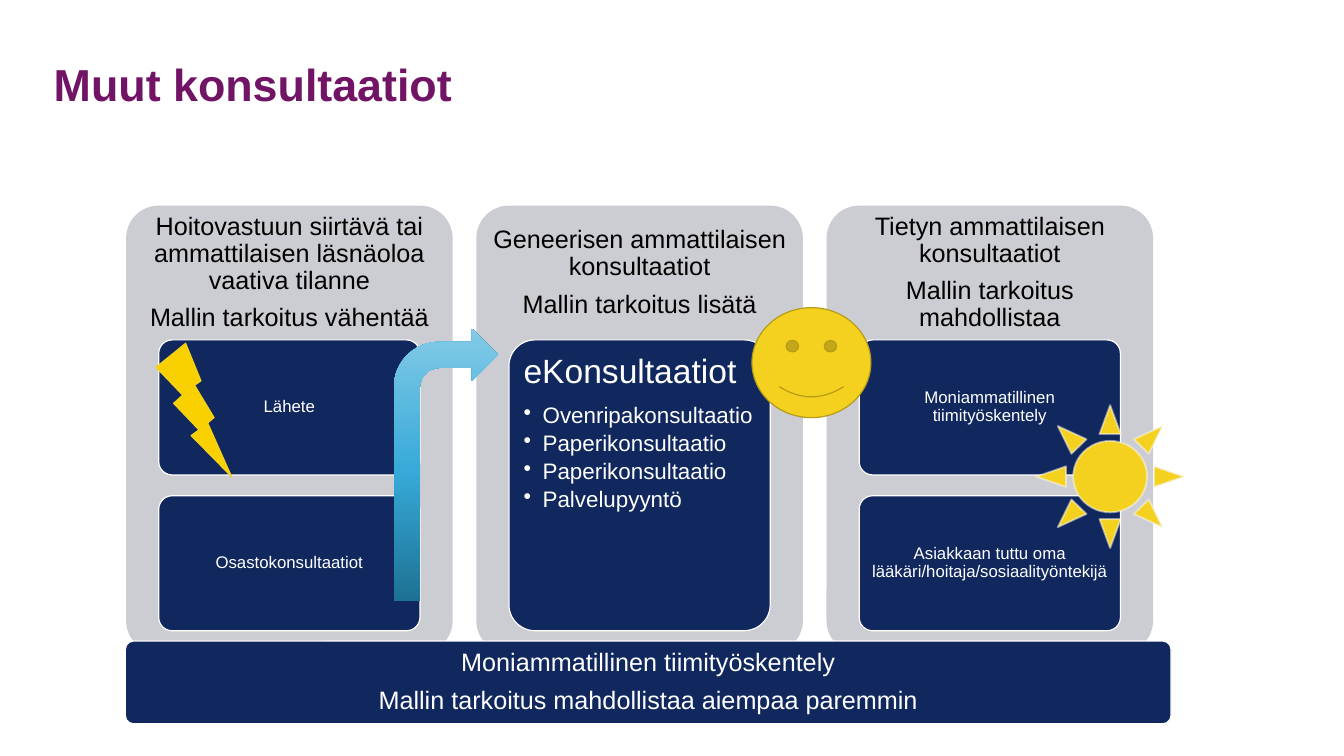
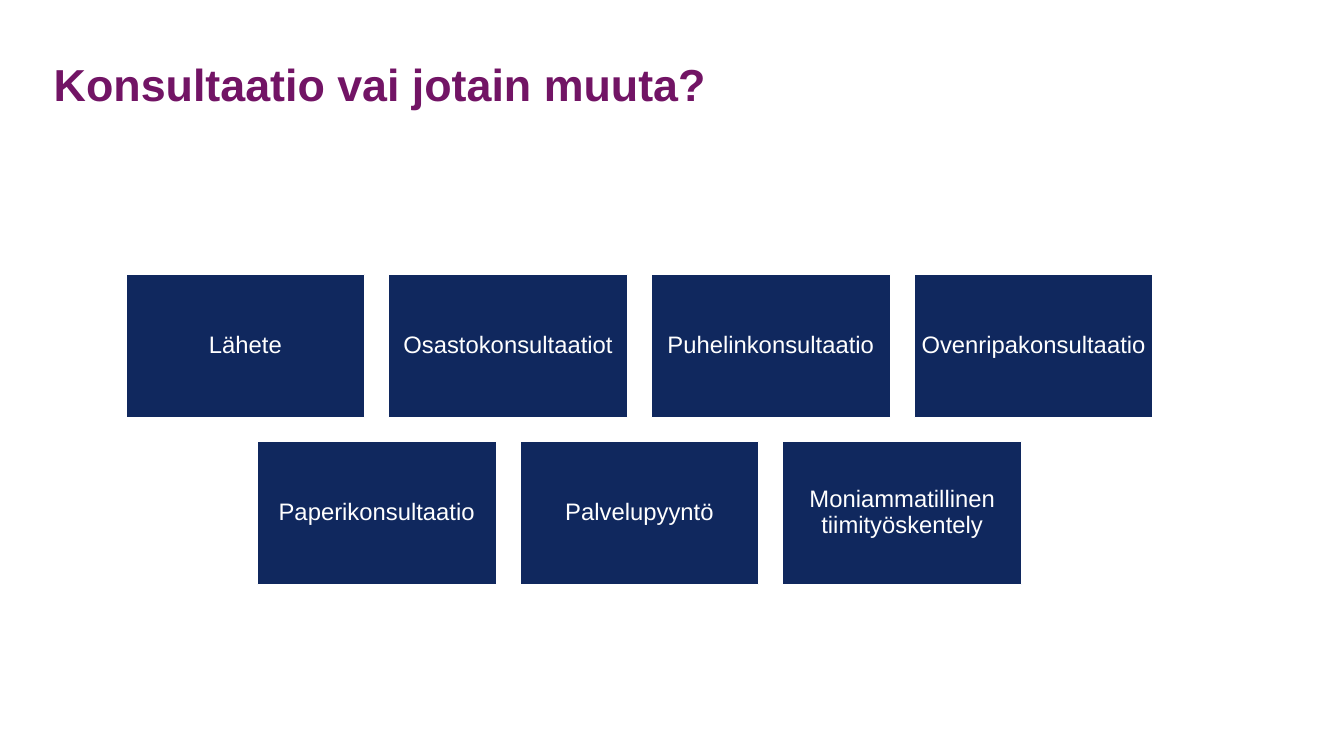
"""Builds two slides about kinds of consultation."""
from copy import deepcopy
from dataclasses import dataclass

from lxml.etree import SubElement
from pptx import Presentation
from pptx.dml.color import RGBColor
from pptx.enum.shapes import MSO_SHAPE as Kind
from pptx.enum.text import MSO_ANCHOR as Anchor, PP_ALIGN as Align
from pptx.oxml.ns import qn
from pptx.util import Emu, Inches, Pt


@dataclass(frozen=True)
class Theme:
    font: str = "Arial"
    plum: str = "721465"
    navy: str = "10285E"
    grey: str = "CCCDD2"
    white: str = "FFFFFF"
    black: str = "000000"
    gold: str = "FAD100"
    yellow: str = "F4D11F"
    ochre: str = "B59B17"
    pale: str = "F9F9F9"
    blues: tuple = ((0, "1D7294"), (0.48, "37AAD8"), (1, "83CAE7"))
    title: int = 32
    lead: int = 24
    heading: int = 18
    tile: int = 17
    bullet: int = 16
    label: int = 12
    hairline: float = 0.85
    line_spacing: float = 0.9
    after: float = 0.4
    bullet_after: float = 0.17
    bullet_indent: float = 0.19
    inset: float = 5
    tight_inset: float = 2


def write(frame, lines, size, color, font, bold=False, align=Align.CENTER,
          anchor=Anchor.MIDDLE, inset=0, spacing=0.9, after=0.4,
          bullet_indent=0, append=False):
    frame.word_wrap = True
    frame.vertical_anchor = anchor
    frame.margin_left = frame.margin_right = Pt(inset)
    frame.margin_top = frame.margin_bottom = Pt(inset)
    for index, line in enumerate(lines):
        fresh = append or index > 0
        paragraph = frame.add_paragraph() if fresh else frame.paragraphs[0]
        if bullet_indent:
            properties = paragraph._p.get_or_add_pPr()
            properties.set("marL", str(Inches(bullet_indent)))
            properties.set("indent", str(-Inches(bullet_indent)))
            SubElement(properties, qn("a:buChar")).set("char", "•")
        paragraph.alignment = align
        paragraph.line_spacing = spacing
        paragraph.space_after = Pt(round(size * after, 1))
        run = paragraph.add_run()
        run.text = line
        run.font.name = font
        run.font.size = Pt(size)
        run.font.bold = bold
        run.font.color.rgb = RGBColor.from_string(color)


class Deck:
    """Holds the style and current slide; places are percentages of the slide."""

    def __init__(self, theme):
        self.theme = theme
        self.show = Presentation()
        self.show.slide_width = Inches(13.333)
        self.show.slide_height = Inches(7.5)
        self.slide = None

    def place(self, left, top, width, height):
        across, down = self.show.slide_width, self.show.slide_height
        return [Emu(round(share * side / 100)) for share, side in
                ((left, across), (top, down), (width, across), (height, down))]

    def new_slide(self, heading):
        self.slide = self.show.slides.add_slide(self.show.slide_layouts[6])
        self.text((4, 4.8, 92.1, 13.47), [heading], size=self.theme.title,
                  color=self.theme.plum, bold=True, align=Align.LEFT)

    def fill_text(self, frame, lines, **format):
        write(frame, lines, **{"font": self.theme.font, "color": self.theme.white,
                               "spacing": self.theme.line_spacing,
                               "after": self.theme.after, **format})

    def text(self, box, lines, **format):
        frame = self.slide.shapes.add_textbox(*self.place(*box)).text_frame
        self.fill_text(frame, lines, **format)

    def figure(self, kind, box, fill=None, line=None, weight=0.85):
        figure = self.slide.shapes.add_shape(kind, *self.place(*box))
        figure.shadow.inherit = False
        if fill:
            figure.fill.solid()
            figure.fill.fore_color.rgb = RGBColor.from_string(fill)
        if line:
            figure.line.color.rgb = RGBColor.from_string(line)
            figure.line.width = Pt(weight)
        else:
            figure.line.fill.background()
        return figure

    def rounded(self, box, fill, line=None):
        panel = self.figure(Kind.ROUNDED_RECTANGLE, box, fill, line,
                            self.theme.hairline)
        panel.adjustments[0] = 0.1
        return panel

    def block(self, box, lines, size, **format):
        panel = self.rounded(box, self.theme.navy, self.theme.white)
        self.fill_text(panel.text_frame, lines, size=size,
                       **{"inset": self.theme.tight_inset, **format})
        return panel

    def tile(self, box, label):
        tile = self.figure(Kind.RECTANGLE, box, self.theme.navy,
                           self.theme.white, self.theme.hairline)
        self.fill_text(tile.text_frame, [label], size=self.theme.tile, inset=4.5)

    def column(self, box, purpose):
        left, top, width, height = box
        self.rounded(box, self.theme.grey)
        self.text((left, top, width, height * 0.3), purpose,
                  size=self.theme.heading, color=self.theme.black,
                  inset=self.theme.inset)
        return left + width * 0.1, top + height * 0.3, width * 0.8, height * 0.65

    def stack(self, area, labels):
        left, top, width, height = area
        gap = 2 / 13
        each = height / (len(labels) + gap * (len(labels) - 1))
        for index, label in enumerate(labels):
            self.block((left, top + index * each * (1 + gap), width, each),
                       [label], self.theme.label)

    def bullet_block(self, area, lead, points):
        style = {"align": Align.LEFT, "anchor": Anchor.TOP,
                 "inset": self.theme.inset}
        panel = self.block(area, [lead], self.theme.lead, **style)
        self.fill_text(panel.text_frame, points, size=self.theme.bullet,
                       after=self.theme.bullet_after, append=True,
                       bullet_indent=self.theme.bullet_indent, **style)

    def gradient_arrow(self, box):
        arrow = self.figure(Kind.BENT_ARROW, box)
        arrow.fill.gradient()
        arrow.fill.gradient_angle = 90
        stops = arrow._element.spPr.find(qn("a:gradFill")).find(qn("a:gsLst"))
        stops.insert(1, deepcopy(stops[0]))
        for stop, (position, color) in zip(arrow.fill.gradient_stops,
                                           self.theme.blues):
            stop.position = position
            stop.color.rgb = RGBColor.from_string(color)

    def sun(self, box):
        sun = self.figure(Kind.SUN, box, self.theme.yellow, self.theme.pale, 1.35)
        outline = sun._element.spPr.find(qn("a:ln"))
        color = next(outline.iter(qn("a:srgbClr")))
        SubElement(color, qn("a:alpha")).set("val", "50000")


def other_consultations(deck):
    theme = deck.theme
    deck.new_slide("Muut konsultaatiot")
    purposes = (
        ["Hoitovastuun siirtävä tai ammattilaisen läsnäoloa vaativa tilanne",
         "Mallin tarkoitus vähentää"],
        ["Geneerisen ammattilaisen konsultaatiot", "Mallin tarkoitus lisätä"],
        ["Tietyn ammattilaisen konsultaatiot", "Mallin tarkoitus mahdollistaa"],
    )
    reduce, increase, enable = [
        deck.column((9.38 + index * 26.06, 27.2, 24.3, 59.2), purpose)
        for index, purpose in enumerate(purposes)]
    deck.stack(reduce, ["Lähete", "Osastokonsultaatiot"])
    deck.bullet_block(increase, "eKonsultaatiot", [
        "Ovenripakonsultaatio", "Paperikonsultaatio", "Paperikonsultaatio",
        "Palvelupyyntö"])
    deck.stack(enable, [
        "Moniammatillinen tiimityöskentely",
        "Asiakkaan tuttu oma lääkäri/hoitaja/sosiaalityöntekijä"])
    deck.figure(Kind.LIGHTNING_BOLT, (11.6, 45.4, 5.65, 17.7), theme.gold,
                theme.yellow, 0.75)
    deck.sun((77.1, 53.6, 11, 18.9))
    deck.gradient_arrow((29.3, 43.5, 7.75, 36))
    deck.figure(Kind.SMILEY_FACE, (55.95, 40.7, 8.85, 14.55), theme.yellow,
                theme.ochre, theme.hairline)
    deck.block((9.33, 84.8, 77.8, 10.95),
               ["Moniammatillinen tiimityöskentely",
                "Mallin tarkoitus mahdollistaa aiempaa paremmin"], theme.heading)


def consultation_or_not(deck):
    deck.new_slide("Konsultaatio vai jotain muuta?")
    rows = (
        ("Lähete", "Osastokonsultaatiot", "Puhelinkonsultaatio",
         "Ovenripakonsultaatio"),
        ("Paperikonsultaatio", "Palvelupyyntö",
         "Moniammatillinen tiimityöskentely"),
    )
    left, top, width, height = 9.38, 36.27, 17.77, 18.96
    across, down = width * 1.1, height * 7 / 6
    for row, labels in enumerate(rows):
        start = left + (len(rows[0]) - len(labels)) * across / 2
        for column, label in enumerate(labels):
            deck.tile((start + column * across, top + row * down, width, height),
                      label)


def main():
    deck = Deck(Theme())
    other_consultations(deck)
    consultation_or_not(deck)
    deck.show.save("out.pptx")


if __name__ == "__main__":
    main()
